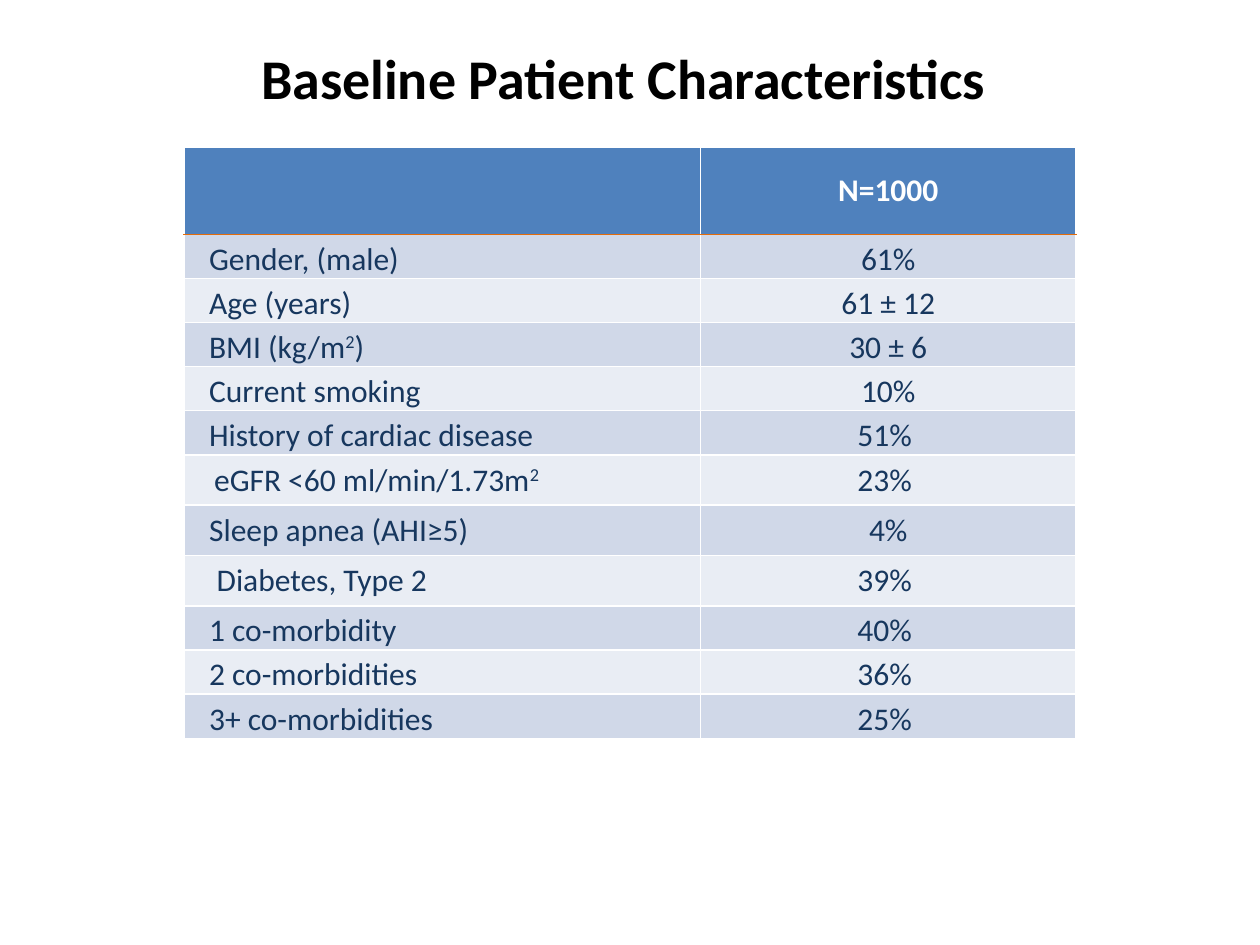
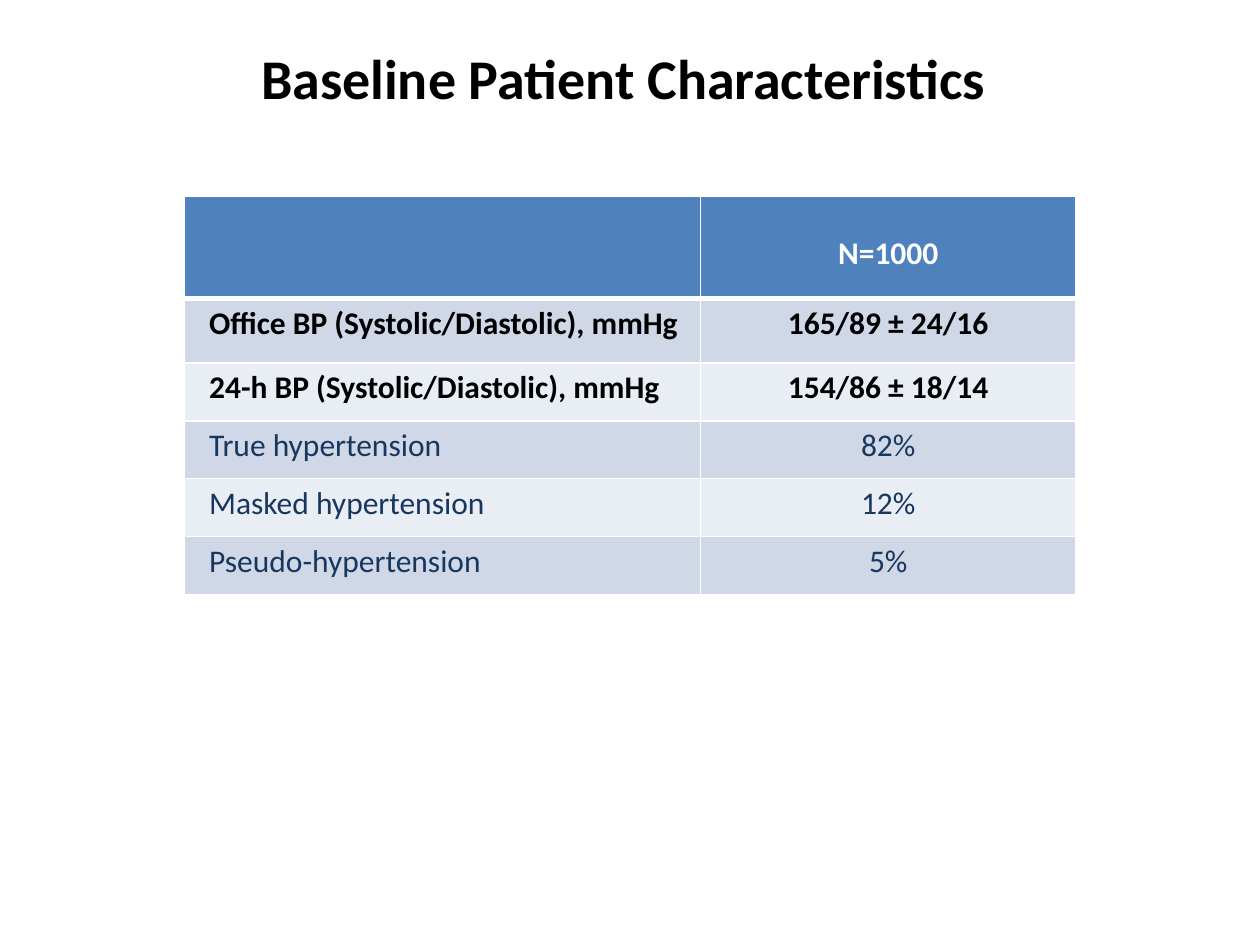
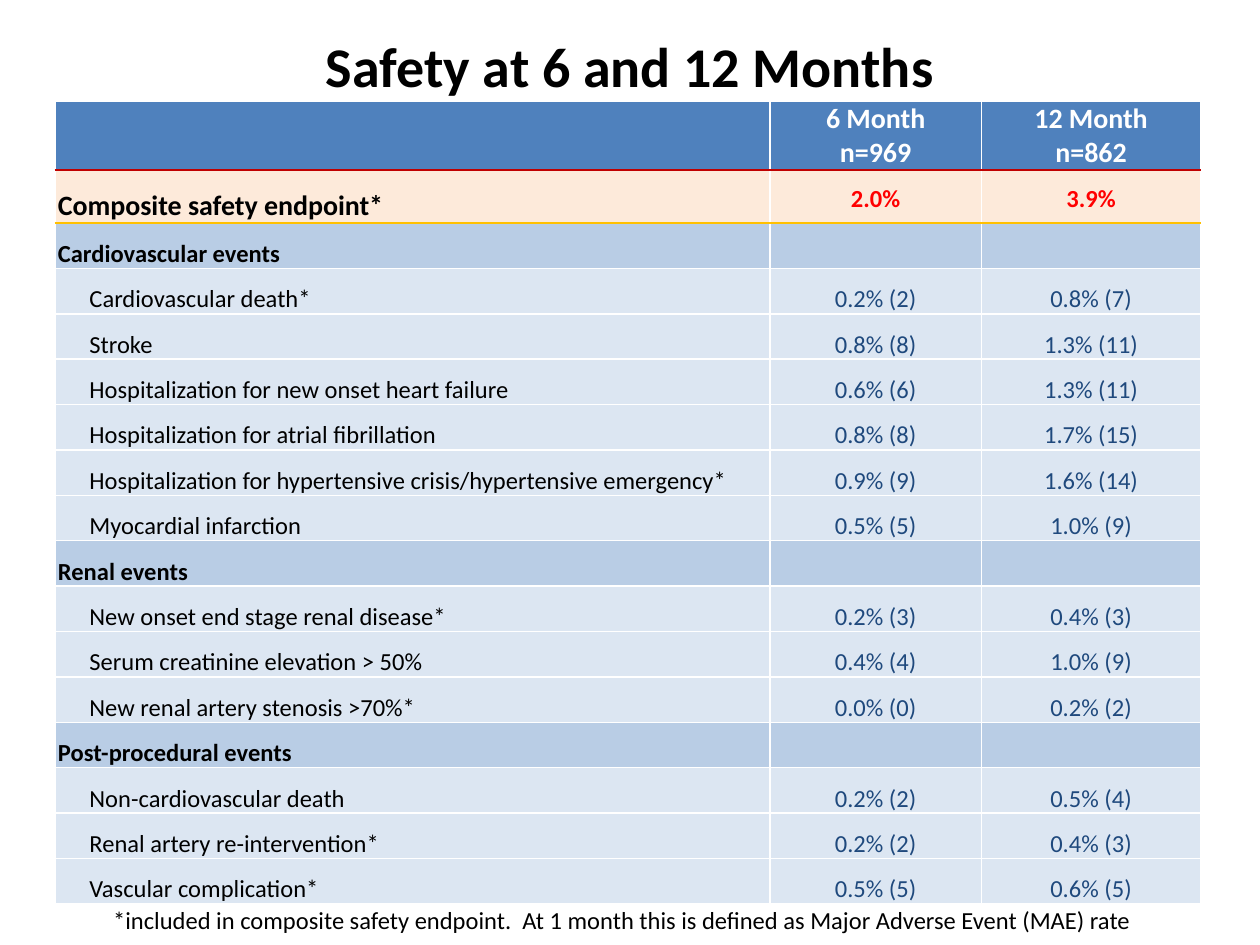
from lxml import etree
from pptx import Presentation
from pptx import util as u
from pptx.dml import color as dml_color
from pptx.enum import text as t
from pptx.oxml import ns

FONT = "Calibri"
BLACK, WHITE, RED = "000000", "FFFFFF", "FF0000"
NAVY, BLUE_TEXT = "17375E", "1F497D"
HEADER = "4F81BD"
BANDS = ("D0D8E8", "E9EDF4")
COMPOSITE, GROUP, EVENT = "FDEADA", "B9CDE5", "DCE6F2"
ORANGE, DARK_RED, GOLD = "E46C0A", "C00000", "FFC000"

LEFT, CENTER = t.PP_ALIGN.LEFT, t.PP_ALIGN.CENTER
TOP, MIDDLE = t.MSO_ANCHOR.TOP, t.MSO_ANCHOR.MIDDLE

TITLE_BOX = (0.5, -0.01, 9, 1.25)
BASELINE_TITLE = "Baseline Patient Characteristics "
BASELINE_COLUMNS = (4.1, 2.98)
LABEL_INDENT = 0.2

# label, value, and for taller rows the label indent
CHARACTERISTICS = [
    ("Gender, (male)", "61%", None),
    ("Age (years)", "61 ± 12", None),
    ("BMI (kg/m^2^)", "30 ± 6", None),
    ("Current smoking", "10%", None),
    ("History of cardiac disease", "51% ", None),
    ("eGFR <60 ml/min/1.73m^2", "23% ", 0.24),
    ("Sleep apnea (AHI≥5)", "4%", 0.2),
    ("Diabetes, Type 2", "39% ", 0.26),
    ("1 co-morbidity", "40% ", None),
    ("2 co-morbidities", "36% ", None),
    ("3+ co-morbidities", "25% ", None),
]

# label, value, emphasised
BLOOD_PRESSURE = [
    ("Office BP (Systolic/Diastolic), mmHg", "165/89 ± 24/16", True),
    ("24-h BP (Systolic/Diastolic), mmHg", "154/86 ± 18/14", True),
    ("True hypertension", "82%", False),
    ("Masked hypertension", "12%", False),
    ("Pseudo-hypertension", "5%", False),
]

# event group, then label, 6-month and 12-month rates
SAFETY_EVENTS = {
    "Cardiovascular events": [
        ("Cardiovascular death*", "0.2% (2)", "0.8% (7)"),
        ("Stroke", "0.8% (8)", "1.3% (11)"),
        ("Hospitalization for new onset heart failure", "0.6% (6)", "1.3% (11)"),
        ("Hospitalization for atrial fibrillation", "0.8% (8)", "1.7% (15)"),
        ("Hospitalization for hypertensive crisis/hypertensive emergency*",
         "0.9% (9)", "1.6% (14)"),
        ("Myocardial infarction", "0.5% (5)", "1.0% (9)"),
    ],
    "Renal events": [
        ("New onset end stage renal disease*", "0.2% (3)", "0.4% (3)"),
        ("Serum creatinine elevation > 50%", "0.4% (4)", "1.0% (9)"),
        ("New renal artery stenosis >70%*", "0.0% (0)", "0.2% (2)"),
    ],
    "Post-procedural events": [
        ("Non-cardiovascular death", "0.2% (2)", "0.5% (4)"),
        ("Renal artery re-intervention*", "0.2% (2)", "0.4% (3)"),
        ("Vascular complication*", "0.5% (5)", "0.6% (5)"),
    ],
}


def rgb(hex_code):
    return dml_color.RGBColor.from_string(hex_code)


def write_text(frame, text, size, color, bold=False, align=LEFT, spacing=1.0):
    """Fill a text frame; newlines part paragraphs, ^ toggles superscript."""
    for index, line in enumerate(text.split("\n")):
        paragraph = frame.add_paragraph() if index else frame.paragraphs[0]
        paragraph.alignment = align
        paragraph.line_spacing = spacing
        font = paragraph.font
        font.name, font.size, font.bold = FONT, u.Pt(size), bold
        font.color.rgb = rgb(color)
        for position, part in enumerate(line.split("^")):
            if part:
                run = paragraph.add_run()
                run.text = part
                if position % 2:
                    run.font._element.set("baseline", "30000")


def add_text_box(slide, box, text, size, anchor=TOP, wrap=True, **style):
    shape = slide.shapes.add_textbox(*map(u.Inches, box))
    frame = shape.text_frame
    frame.word_wrap = wrap
    frame.vertical_anchor = anchor
    write_text(frame, text, size, BLACK, **style)
    return shape


def add_title(slide, text, box=TITLE_BOX):
    add_text_box(slide, box, text, 32, MIDDLE, bold=True, align=CENTER)


def set_borders(cell, above, below):
    """Draw white sides, and the given (colour, points) above and below."""
    side = (WHITE, 1)
    properties = cell._tc.get_or_add_tcPr()
    for tag, (color, width) in zip(("lnL", "lnR", "lnT", "lnB"),
                                   (side, side, above, below)):
        line = etree.SubElement(properties, ns.qn("a:" + tag), w=str(u.Pt(width)))
        fill = etree.SubElement(line, ns.qn("a:solidFill"))
        etree.SubElement(fill, ns.qn("a:srgbClr"), val=color)


def add_grid(slide, left, top, widths, heights, rules):
    """Add a bare table; rules maps a row to the line below it."""
    box = (left, top, sum(widths), sum(heights))
    frame = slide.shapes.add_table(len(heights), len(widths), *map(u.Inches, box))
    table = frame.table
    table.first_row = table.horz_banding = False
    for column, width in zip(table.columns, widths):
        column.width = u.Inches(width)
    for index, (row, height) in enumerate(zip(table.rows, heights)):
        row.height = u.Inches(height)
        for cell in row.cells:
            set_borders(cell, rules.get(index - 1, (WHITE, 1)),
                        rules.get(index, (WHITE, 1)))
    return table


def fill_cell(cell, text, fill, size, color, anchor=TOP, indent=0.02, pad=0.0, **style):
    cell.fill.solid()
    cell.fill.fore_color.rgb = rgb(fill)
    cell.vertical_anchor = anchor
    cell.margin_left = u.Inches(indent)
    cell.margin_right = u.Inches(0.02)
    cell.margin_top, cell.margin_bottom = u.Inches(pad), 0
    write_text(cell.text_frame, text, size, color, **style)


def fill_header(table, texts, size, **style):
    for cell, text in zip(table.rows[0].cells, texts):
        fill_cell(cell, text, HEADER, size, WHITE, bold=True, align=CENTER, **style)


def fill_pair(table, row, label, value, color, indent=LABEL_INDENT, **style):
    """Fill one banded row of a baseline table."""
    band = BANDS[(row - 1) % 2]
    fill_cell(table.cell(row, 0), label, band, 18, color, indent=indent, **style)
    fill_cell(table.cell(row, 1), value, band, 18, color, align=CENTER, **style)


def build_characteristics(slide, left=1.46, top=1.17):
    add_title(slide, BASELINE_TITLE)
    heights = [0.69] + [0.4 if indent else 0.35 for *_, indent in CHARACTERISTICS]
    table = add_grid(slide, left, top, BASELINE_COLUMNS, heights, {0: (ORANGE, 0.75)})
    fill_header(table, ("", "N=1000"), 18, anchor=MIDDLE)
    for row, (label, value, indent) in enumerate(CHARACTERISTICS, 1):
        if indent:
            fill_pair(table, row, label, value, NAVY, indent, pad=0.05)
        else:
            fill_pair(table, row, label, value, NAVY, spacing=1.15)


def build_blood_pressure(slide, left=1.46, top=1.56):
    heights = [0.81, 0.51] + [0.46] * (len(BLOOD_PRESSURE) - 1)
    table = add_grid(slide, left, top, BASELINE_COLUMNS, heights, {0: (WHITE, 3)})
    fill_header(table, ("", "N=1000"), 18, pad=0.3)
    for row, (label, value, strong) in enumerate(BLOOD_PRESSURE, 1):
        fill_pair(table, row, label, value, BLACK if strong else NAVY,
                  bold=strong, spacing=1.15)
    add_title(slide, BASELINE_TITLE)


def build_safety(slide, left=0.44, top=0.8):
    add_title(slide, "Safety at 6 and 12 Months", (0.5, -0.11, 9, 1.25))
    event_rows = sum(1 + len(events) for events in SAFETY_EVENTS.values())
    table = add_grid(slide, left, top, (5.67, 1.68, 1.74),
                     [0.55, 0.42] + [0.36] * event_rows,
                     {0: (DARK_RED, 1), 1: (GOLD, 1)})
    fill_header(table, ("", "6 Month\nn=969", "12 Month\nn=862"), 16, pad=0.01)

    # Composite endpoint
    endpoint, *rates = table.rows[1].cells
    fill_cell(endpoint, "Composite safety endpoint*", COMPOSITE, 16, BLACK,
              pad=0.01, bold=True, spacing=1.5)
    for cell, rate in zip(rates, ("2.0%", "3.9%")):
        fill_cell(cell, rate, COMPOSITE, 14, RED, MIDDLE,
                  bold=True, align=CENTER, spacing=1.15)

    # Event groups
    rows = iter(list(table.rows)[2:])
    for group, events in SAFETY_EVENTS.items():
        for cell, text in zip(next(rows).cells, (group, "", "")):
            fill_cell(cell, text, GROUP, 14, BLACK, pad=0.01, bold=True, spacing=1.5)
        for label, *values in events:
            name, *rates = next(rows).cells
            fill_cell(name, label, EVENT, 14, BLACK, indent=0.27, pad=0.01, spacing=1.5)
            for cell, value in zip(rates, values):
                fill_cell(cell, value, EVENT, 14, BLUE_TEXT,
                          pad=0.01, align=CENTER, spacing=1.5)

    # Footnote
    note = add_text_box(slide, (0.8, 7.13, 8.4, 0.34),
                        "*included in composite safety endpoint.  At 1 month this is "
                        "defined as Major Adverse Event (MAE) rate", 14, wrap=False)
    note.text_frame.auto_size = t.MSO_AUTO_SIZE.SHAPE_TO_FIT_TEXT


def main():
    presentation = Presentation()
    presentation.slide_width, presentation.slide_height = u.Inches(10), u.Inches(7.5)
    blank = presentation.slide_layouts[6]
    for build in (build_characteristics, build_blood_pressure, build_safety):
        build(presentation.slides.add_slide(blank))
    presentation.save("out.pptx")


if __name__ == "__main__":
    main()
